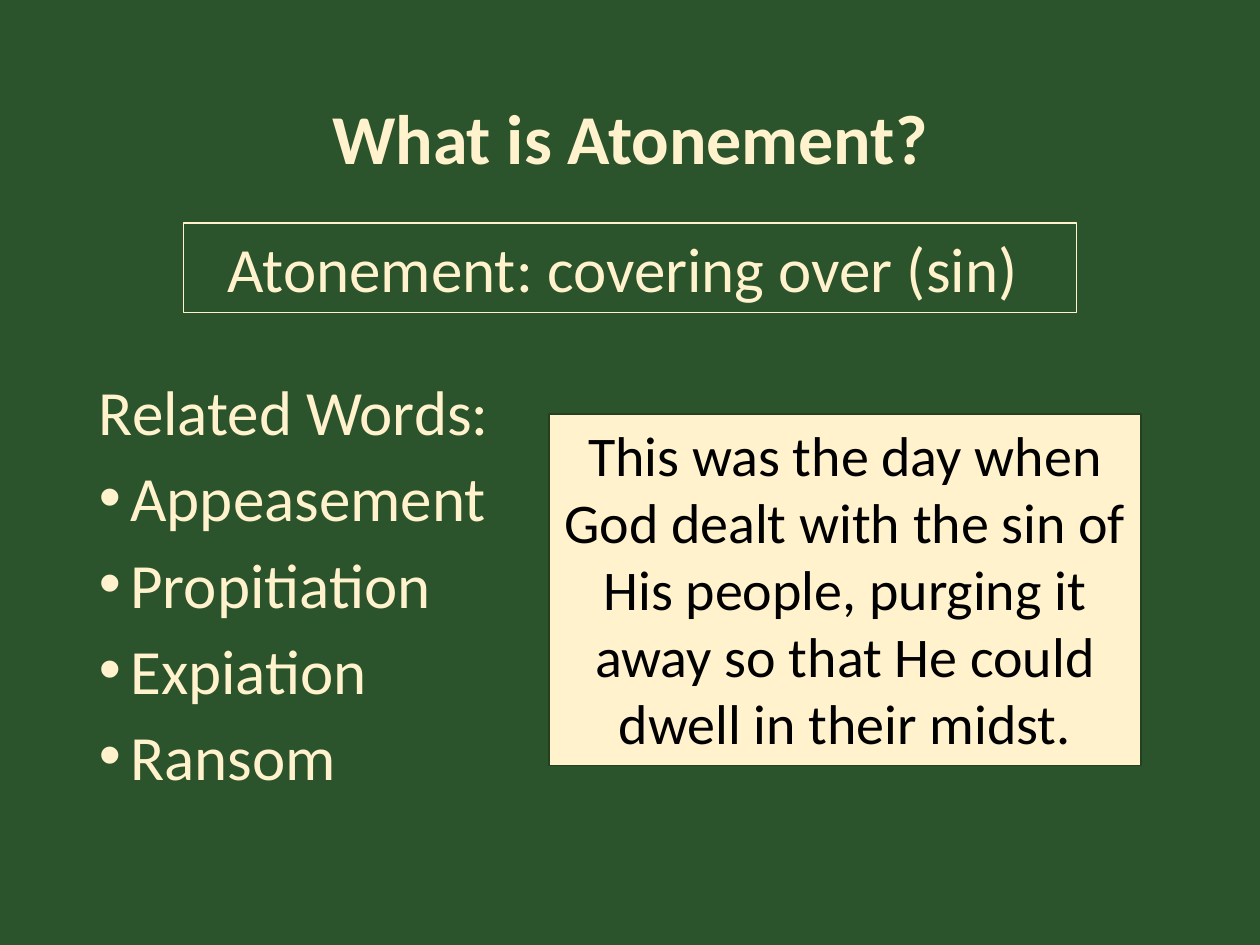
from lxml import etree
from pptx import Presentation
from pptx.dml.color import RGBColor
from pptx.enum.shapes import MSO_SHAPE
from pptx.enum.text import MSO_ANCHOR, PP_ALIGN
from pptx.oxml.ns import qn
from pptx.util import Pt

GREEN = RGBColor(0x2B, 0x54, 0x2C)
EDGE = RGBColor(0x25, 0x40, 0x21)
CREAM = RGBColor(0xFF, 0xF2, 0xCC)
BLACK = RGBColor(0, 0, 0)
LEFT, CENTER = PP_ALIGN.LEFT, PP_ALIGN.CENTER
TOP, MIDDLE = MSO_ANCHOR.TOP, MSO_ANCHOR.MIDDLE
RECT = MSO_SHAPE.RECTANGLE
TITLE_ONLY = 5
MARGIN, WIDE = 49.5, 621


def write(para, text, size=36, color=CREAM, bold=False, align=LEFT,
          after=0, lines=1, font="Calibri"):
    para.alignment = align
    para.space_before, para.space_after = Pt(0), Pt(after)
    para.line_spacing = lines
    run = para.add_run()
    run.text = text
    run.font.name, run.font.size = font, Pt(size)
    run.font.bold = bold
    run.font.color.rgb = color


def bullet(para, indent=18):
    """Give the paragraph a hanging bullet."""
    props = para._p.get_or_add_pPr()
    props.set("marL", str(Pt(indent)))
    props.set("indent", str(-Pt(indent)))
    etree.SubElement(props, qn("a:buFont")).set("typeface", "Arial")
    etree.SubElement(props, qn("a:buChar")).set("char", "•")


class Board:
    """Holds the slide and its shared style."""

    def __init__(self, deck):
        self.slide = deck.slides.add_slide(deck.slide_layouts[TITLE_ONLY])
        fill = self.slide.background.fill
        fill.solid()
        fill.fore_color.rgb = GREEN

    def frame(self, shape, anchor):
        frame = shape.text_frame
        frame.word_wrap = True
        frame.vertical_anchor = anchor
        return frame

    def title(self, text, x, y, w, h):
        shape = self.slide.shapes.title
        shape.left, shape.top, shape.width, shape.height = map(Pt, (x, y, w, h))
        frame = self.frame(shape, MIDDLE)
        write(frame.paragraphs[0], text, size=40, bold=True, align=CENTER, lines=0.9)

    def words(self, head, items, x, y, w, h):
        """Add a heading with a bulleted list below it."""
        shape = self.slide.shapes.add_textbox(*map(Pt, (x, y, w, h)))
        frame = self.frame(shape, TOP)
        write(frame.paragraphs[0], head, after=6)
        for item in items:
            para = frame.add_paragraph()
            write(para, item, after=6)
            bullet(para)

    def box(self, text, x, y, w, h, fill=None, line=CREAM, **style):
        shape = self.slide.shapes.add_shape(RECT, *map(Pt, (x, y, w, h)))
        shape.shadow.inherit = False
        if fill is None:
            shape.fill.background()
        else:
            shape.fill.solid()
            shape.fill.fore_color.rgb = fill
        shape.line.color.rgb = line
        shape.line.width = Pt(0.75)
        frame = self.frame(shape, TOP)
        write(frame.paragraphs[0], text, align=CENTER, **style)


def main():
    deck = Presentation()
    deck.slide_width, deck.slide_height = Pt(720), Pt(540)
    board = Board(deck)
    board.title("What is Atonement?", MARGIN, 28.75, WIDE, 104.4)
    board.words("Related Words:",
                ("Appeasement", "Propitiation", "Expiation", "Ransom"),
                MARGIN, 209.5, WIDE, 262.8)
    board.box("Atonement: covering over (sin) ", 104.75, 127.5, 510.5, 51, after=12)
    board.box("This was the day when God dealt with the sin of His people, "
              "purging it away so that He could dwell in their midst.",
              313.75, 236.5, 338.4, 200.9, fill=CREAM, line=EDGE,
              size=32, color=BLACK)
    deck.save("out.pptx")


if __name__ == "__main__":
    main()
